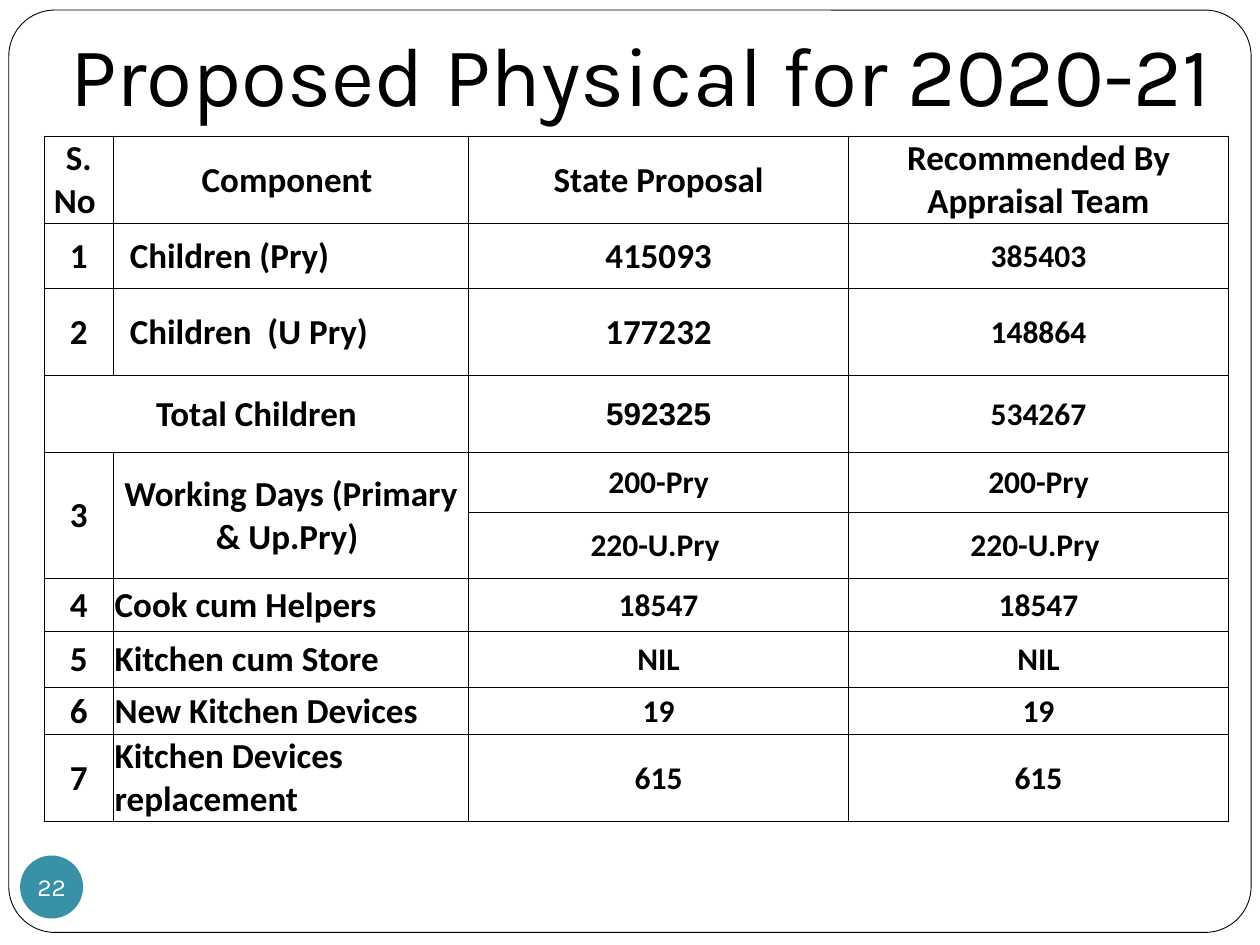
import pptx
import pptx.dml.color
import pptx.enum.shapes
import pptx.enum.text
import pptx.oxml
import pptx.oxml.ns
import pptx.util

BLACK = pptx.dml.color.RGBColor(0x00, 0x00, 0x00)
WHITE = pptx.dml.color.RGBColor(0xFF, 0xFF, 0xFF)
TEAL = pptx.dml.color.RGBColor(0x38, 0x91, 0xA7)

SHAPE = pptx.enum.shapes.MSO_SHAPE
ALIGN = pptx.enum.text.PP_ALIGN
ANCHOR = pptx.enum.text.MSO_ANCHOR

CELL = pptx.util.Inches(0.1)  # the grid has 100 columns and 75 rows
COLUMNS = [5.5, 28.2, 30.15, 30.15]
ROWS = [6.9, 5.2, 6.9, 6.1, 4.8, 5.2, 4.2, 4.5, 3.7, 6.9]
MERGES = [((3, 0), (3, 1)), ((4, 0), (5, 0)), ((4, 1), (5, 1))]
# None marks a cell covered by a merged neighbour
DATA = [
    ["S. No ", "Component ", "State Proposal", "Recommended By Appraisal Team"],
    ["1", "Children (Pry)", "415093", "385403"],
    ["2", "Children  (U Pry)", "177232", "148864"],
    ["Total Children", None, "592325", "534267"],
    ["3", "Working Days (Primary & Up.Pry) ", "200-Pry", "200-Pry"],
    [None, None, "220-U.Pry ", "220-U.Pry "],
    ["4", "Cook cum Helpers", "18547", "18547"],
    ["5", "Kitchen cum Store", "NIL", "NIL"],
    ["6", "New Kitchen Devices", "19", "19"],
    ["7", "Kitchen Devices replacement", "615", "615"],
]


def grid(*lengths):
    return [round(n * CELL) for n in lengths]


class SlideBuilder:
    heading_font = "Karla"
    table_font = "Calibri"
    line_width = pptx.util.Pt(0.5)

    def __init__(self, prs):
        self.slide = prs.slides.add_slide(prs.slide_layouts[6])

    def set_text(self, tf, text, size, font, color=BLACK, bold=False, align=ALIGN.CENTER):
        tf.text = text
        p = tf.paragraphs[0]
        p.alignment = align
        f = p.runs[0].font
        f.size, f.name, f.bold = pptx.util.Pt(size), font, bold
        f.color.rgb = color
        return p

    def set_margins(self, box, left, top, right, bottom):
        box.margin_left, box.margin_top, box.margin_right, box.margin_bottom = grid(
            left, top, right, bottom)

    def shape(self, kind, at, fill, line=None):
        sp = self.slide.shapes.add_shape(kind, *grid(*at))
        sp.shadow.inherit = False
        sp.fill.solid()
        sp.fill.fore_color.rgb = fill
        if line is None:
            sp.line.fill.background()
        else:
            sp.line.color.rgb = line
            sp.line.width = self.line_width
        return sp

    def frame(self, at):
        self.shape(SHAPE.ROUNDED_RECTANGLE, at, WHITE, BLACK).adjustments[0] = 0.05

    def title(self, text, at):
        tf = self.slide.shapes.add_textbox(*grid(*at)).text_frame
        tf.word_wrap = True
        tf.vertical_anchor = ANCHOR.BOTTOM
        self.set_margins(tf, 1, 0.5, 1, 1)
        self.set_text(tf, text, 48, self.heading_font)

    def page_badge(self, number, at):
        tf = self.shape(SHAPE.OVAL, at, TEAL).text_frame
        tf.word_wrap = False
        tf.vertical_anchor = ANCHOR.MIDDLE
        self.set_margins(tf, 0, 0, 0, 0)
        self.set_text(tf, number, 14, self.heading_font, WHITE)

    def border(self, cell):
        tc_pr = cell._tc.get_or_add_tcPr()
        for side in ("lnL", "lnR", "lnT", "lnB"):
            tc_pr.append(pptx.oxml.parse_xml(
                f'<a:{side} {pptx.oxml.ns.nsdecls("a")} w="{self.line_width}">'
                f'<a:solidFill><a:srgbClr val="{BLACK}"/></a:solidFill></a:{side}>'))

    def cell(self, cell, text, row, col):
        """Style a cell by its place: labels are larger, component names run left."""
        self.border(cell)
        cell.fill.background()
        cell.vertical_anchor = ANCHOR.MIDDLE
        self.set_margins(cell, 0.1, 0.1, 0.1, 0)
        if text is None:
            return
        is_large = row == 0 or col < 2 or (col == 2 and row < 3)
        is_left = col == 1 and row not in (0, 4)
        font = "Arial" if (row, col) == (3, 2) else self.table_font
        p = self.set_text(cell.text_frame, text, 20 if is_large else 18, font, bold=True,
                          align=ALIGN.LEFT if is_left else ALIGN.CENTER)
        if is_left and row < 3:
            p._p.get_or_add_pPr().set("marL", str(pptx.util.Inches(0.12)))

    def table(self, left, top, columns, rows, data, merges):
        size = grid(left, top, sum(columns), sum(rows))
        table = self.slide.shapes.add_table(len(rows), len(columns), *size).table
        table.first_row = table.horz_banding = False
        for column, width in zip(table.columns, grid(*columns)):
            column.width = width
        for row, height in zip(table.rows, grid(*rows)):
            row.height = height
        for first, last in merges:
            table.cell(*first).merge(table.cell(*last))
        for r, texts in enumerate(data):
            for c, text in enumerate(texts):
                self.cell(table.cell(r, c), text, r, c)


def main():
    prs = pptx.Presentation()
    prs.slide_width, prs.slide_height = grid(100, 75)
    s = SlideBuilder(prs)
    s.frame((0.7, 0.8, 98.6, 73.2))
    s.title("Proposed Physical for 2020-21", (4.2, 0.8, 93.3, 10))
    s.page_badge("22", (1.6, 67.9, 5, 5))
    s.table(3.5, 10.8, COLUMNS, ROWS, DATA, MERGES)
    prs.save("out.pptx")


if __name__ == "__main__":
    main()
